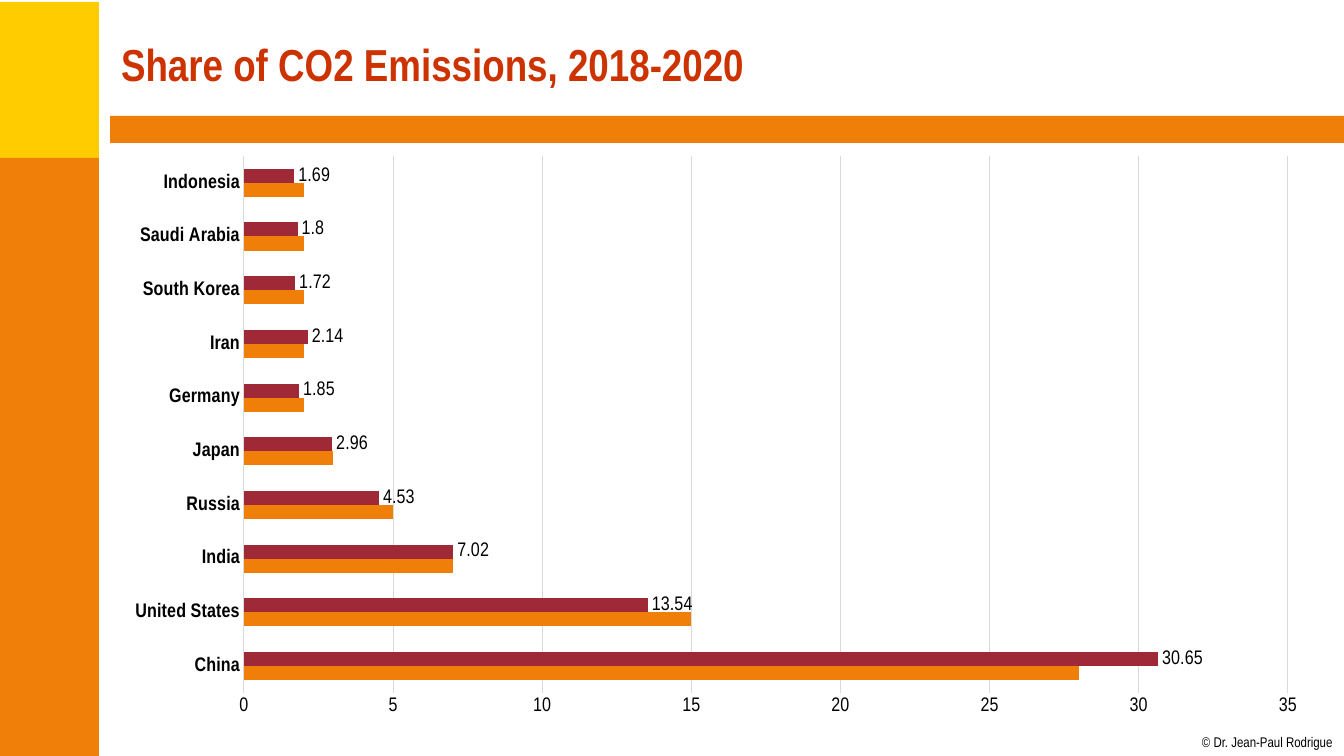
from dataclasses import dataclass

from lxml import etree
from pptx import Presentation
from pptx import util as u
from pptx.chart import data as cd
from pptx.dml.color import RGBColor
from pptx.enum import chart as ec, shapes, text
from pptx.oxml import ns

SCALE = 914400 / 100.8  # EMU per px


@dataclass(frozen=True)
class Theme:
    font: str = "Arial Narrow"
    gold: str = "FFCC00"
    orange: str = "F07F09"
    wine: str = "9F2936"
    red: str = "CC3300"
    black: str = "000000"
    grid: str = "D9D9D9"
    head: int = 32
    label: int = 14
    note: int = 10


@dataclass(frozen=True)
class Box:
    left: int
    top: int
    width: int
    height: int

    def emu(self) -> list[int]:
        return [px(n) for n in (self.left, self.top, self.width, self.height)]


@dataclass(frozen=True)
class Panel:
    box: Box
    color: str


@dataclass(frozen=True)
class Series:
    name: str
    color: str
    shares: tuple[float, ...]


THEME = Theme()
PANELS = [
    Panel(Box(0, 2, 99, 157), THEME.gold),
    Panel(Box(0, 158, 99, 598), THEME.orange),
    Panel(Box(110, 116, 1234, 27), THEME.orange),
]
TITLE = Box(111, 11, 1210, 105)
CHART = Box(111, 144, 1210, 584)
PLOT = Box(244, 156, 1044, 537)
CREDIT = Box(1202, 734, 132, 17)

NATIONS = ("China", "United States", "India", "Russia", "Japan", "Germany",
           "Iran", "South Korea", "Saudi Arabia", "Indonesia")
SERIES = [
    Series("Series 1", THEME.orange, (28, 15, 7, 5, 3, 2, 2, 2, 2, 2)),
    Series("Series 2", THEME.wine,
           (30.65, 13.54, 7.02, 4.53, 2.96, 1.85, 2.14, 1.72, 1.8, 1.69)),
]


def px(count: int) -> int:
    return round(count * SCALE)


def rgb(code: str) -> RGBColor:
    return RGBColor.from_string(code)


def style(font, size: int, color: str = THEME.black, bold: bool = False) -> None:
    font.name = THEME.font
    font.size = u.Pt(size)
    font.bold = bold
    font.color.rgb = rgb(color)


def rule(line) -> None:
    line.color.rgb = rgb(THEME.grid)
    line.width = u.Pt(0.75)


def add_panel(slide, panel: Panel) -> None:
    shape = slide.shapes.add_shape(shapes.MSO_SHAPE.RECTANGLE, *panel.box.emu())
    shape.shadow.inherit = False
    shape.fill.solid()
    shape.fill.fore_color.rgb = rgb(panel.color)
    shape.line.fill.background()


def set_title(slide, words: str) -> None:
    title = slide.shapes.title
    title.left, title.top, title.width, title.height = TITLE.emu()
    frame = title.text_frame
    frame.text = words
    frame.auto_size = text.MSO_AUTO_SIZE.NONE
    frame.vertical_anchor = text.MSO_ANCHOR.MIDDLE
    para = frame.paragraphs[0]
    para.alignment = text.PP_ALIGN.LEFT
    style(para.font, THEME.head, THEME.red, True)


def add_credit(slide, words: str) -> None:
    frame = slide.shapes.add_textbox(*CREDIT.emu()).text_frame
    frame.margin_left = frame.margin_right = 0
    frame.margin_top = frame.margin_bottom = 0
    frame.word_wrap = False
    frame.text = words
    style(frame.paragraphs[0].font, THEME.note)


def place_plot(chart) -> None:
    """Fix the inner plot area inside the chart frame."""
    area = chart._chartSpace.chart.plotArea
    for old in area.findall(ns.qn("c:layout")):
        area.remove(old)
    layout = etree.Element(ns.qn("c:layout"))
    manual = etree.SubElement(layout, ns.qn("c:manualLayout"))
    parts = {
        "layoutTarget": "inner", "xMode": "edge", "yMode": "edge",
        "x": (PLOT.left - CHART.left) / CHART.width,
        "y": (PLOT.top - CHART.top) / CHART.height,
        "w": PLOT.width / CHART.width,
        "h": PLOT.height / CHART.height,
    }
    for tag, value in parts.items():
        etree.SubElement(manual, ns.qn(f"c:{tag}")).set("val", str(value))
    area.insert(0, layout)


def add_bars(slide) -> None:
    data = cd.CategoryChartData()
    data.categories = NATIONS
    for item in SERIES:
        data.add_series(item.name, item.shares)
    chart = slide.shapes.add_chart(
        ec.XL_CHART_TYPE.BAR_CLUSTERED, *CHART.emu(), data).chart
    chart.has_legend = False
    chart.has_title = False
    style(chart.font, THEME.label)
    place_plot(chart)

    # Bars
    plot = chart.plots[0]
    plot.gap_width = 182
    plot.overlap = 0
    plot.vary_by_categories = False
    for bars, item in zip(plot.series, SERIES):
        bars.format.fill.solid()
        bars.format.fill.fore_color.rgb = rgb(item.color)
        bars.invert_if_negative = False
    labels = plot.series[1].data_labels
    labels.show_value = True
    labels.position = ec.XL_LABEL_POSITION.OUTSIDE_END
    style(labels.font, THEME.label)

    # Axes
    names, scale = chart.category_axis, chart.value_axis
    for axis in (names, scale):
        axis.major_tick_mark = axis.minor_tick_mark = ec.XL_TICK_MARK.NONE
        style(axis.tick_labels.font, THEME.label, bold=axis is names)
    rule(names.format.line)
    scale.minimum_scale, scale.maximum_scale, scale.major_unit = 0, 35, 5
    scale.format.line.fill.background()
    rule(scale.major_gridlines.format.line)


def main() -> None:
    deck = Presentation()
    deck.slide_width, deck.slide_height = px(1344), px(756)
    slide = deck.slides.add_slide(deck.slide_layouts[5])
    for panel in PANELS:
        add_panel(slide, panel)
    add_credit(slide, "© Dr. Jean-Paul Rodrigue")
    set_title(slide, "Share of CO2 Emissions, 2018-2020")
    add_bars(slide)
    deck.save("out.pptx")


if __name__ == "__main__":
    main()
